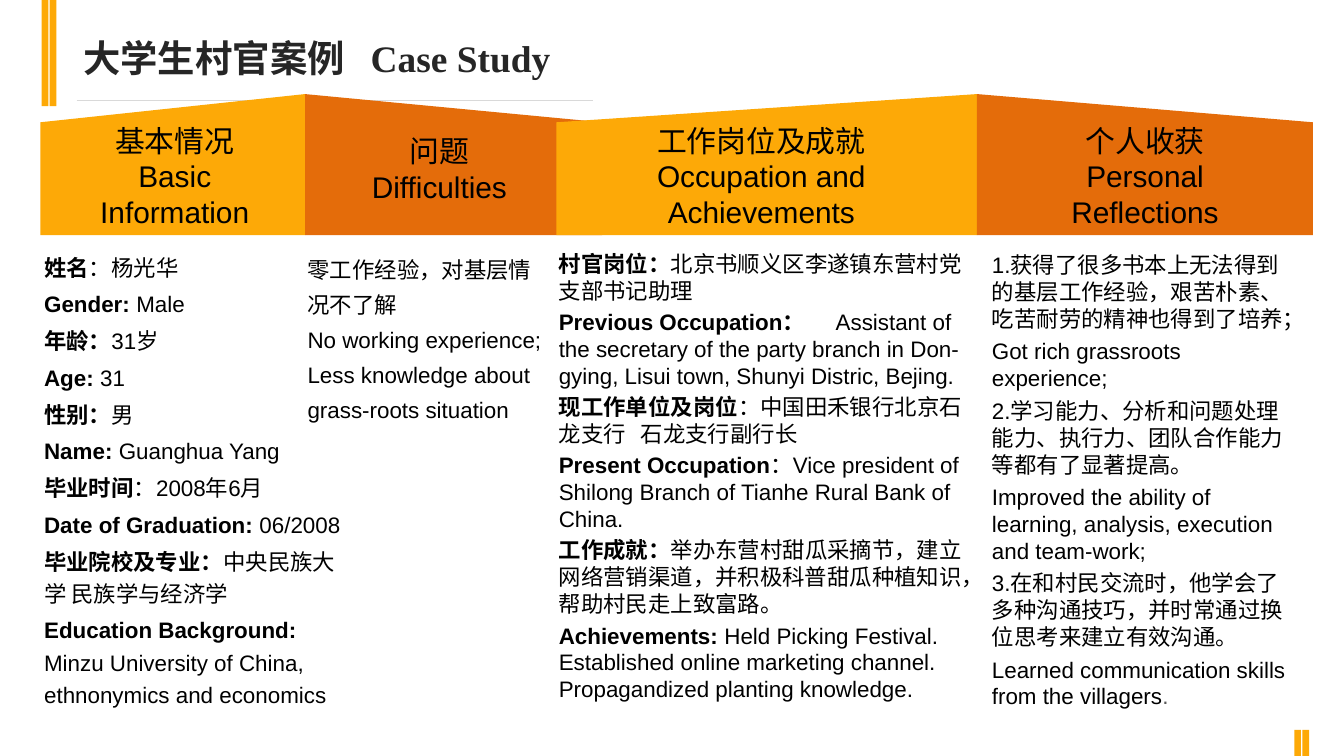
from pptx import Presentation
from pptx.dml.color import RGBColor
from pptx.enum.shapes import MSO_CONNECTOR, MSO_SHAPE
from pptx.enum.text import MSO_AUTO_SIZE, PP_ALIGN
from pptx.oxml.ns import qn
from pptx.util import Inches, Pt
from lxml.etree import SubElement

AMBER = RGBColor(0xFD, 0xA9, 0x07)
ORANGE = RGBColor(0xE4, 0x6C, 0x0A)
BLACK = RGBColor(0, 0, 0)
DARK = RGBColor(0x26, 0x26, 0x26)
GRAY = RGBColor(0x59, 0x59, 0x59)
RULE = RGBColor(0xD9, 0xD9, 0xD9)

SLIDE_W = 10
SLIDE_H = SLIDE_W * 9 / 16
PANEL_TOP, PANEL_H = 0.7, 1.05
BAR_W, BAR_STEP = 0.05, 0.06

# Content: a paragraph is (bold label, plain text)
BASICS = [
    ("姓名", "：杨光华"),
    ("Gender: ", "Male"),
    ("年龄：", "31岁"),
    ("Age: ", "31"),
    ("性别：", "男"),
    ("Name: ", "Guanghua Yang"),
    ("毕业时间", "：2008年6月"),
    ("Date of Graduation: ", "06/2008"),
    ("毕业院校及专业：", "中央民族大学 民族学与经济学"),
    ("Education Background: ", "Minzu University of China, ethnonymics and economics"),
]
DIFFICULTIES = [
    ("", "零工作经验，对基层情况不了解"),
    ("", "No working experience;"),
    ("", "Less knowledge about grass-roots situation"),
]
JOBS = [
    ("村官岗位：", "北京书顺义区李遂镇东营村党支部书记助理"),
    ("Previous Occupation：", "\tAssistant of the secretary of the party branch in "
     "Don-gying, Lisui town, Shunyi Distric, Bejing."),
    ("现工作单位及岗位", "：中国田禾银行北京石龙支行\t石龙支行副行长"),
    ("Present Occupation", "：Vice president of Shilong Branch of Tianhe Rural Bank of China."),
    ("工作成就：", "举办东营村甜瓜采摘节，建立网络营销渠道，"
     "并积极科普甜瓜种植知识，帮助村民走上致富路。"),
    ("Achievements: ", "Held Picking Festival. Established online marketing channel. "
     "Propagandized planting knowledge."),
]
REFLECTIONS = [
    ("", "1.获得了很多书本上无法得到的基层工作经验，艰苦朴素、吃苦耐劳的精神也得到了培养；"),
    ("", "Got rich grassroots experience;"),
    ("", "2.学习能力、分析和问题处理能力、执行力、团队合作能力等都有了显著提高。"),
    ("", "Improved the ability of learning, analysis, execution and team-work;"),
    ("", "3.在和村民交流时，他学会了多种沟通技巧，并时常通过换位思考来建立有效沟通。"),
    ("", "Learned communication skills from the villagers"),
]

# Columns: panel (left, width), heading box, heading, body box, body, body style
COLUMNS = [
    dict(panel=(0.3, 1.97), head_at=(0.49, 0.86, 1.62, 0.91),
         head=["基本情况", "Basic Information"],
         body_at=(0.23, 1.8, 2.42, 3.61), body=BASICS,
         style=dict(line=1.2, before=2.4)),
    dict(panel=(2.27, 2.21), head_at=(2.5, 0.94, 1.54, 0.64),
         head=["问题", "Difficulties"],
         body_at=(2.19, 1.8, 1.97, 1.39), body=DIFFICULTIES,
         style=dict(line=1.3)),
    dict(panel=(4.14, 3.13), head_at=(4.61, 0.86, 2.11, 0.91),
         head=["工作岗位及成就", "Occupation and Achievements"],
         body_at=(4.06, 1.81, 3.2, 3.53), body=JOBS,
         style=dict(before=2.4, tabs={1: 2.06, 2: 0.61})),
    dict(panel=(7.27, 2.5), head_at=(7.58, 0.86, 1.88, 0.91),
         head=["个人收获", "Personal Reflections"],
         body_at=(7.34, 1.83, 2.35, 3.32), body=REFLECTIONS,
         style=dict(before=3, inset=0.04)),
]


def add_block(s, kind, box, color):
    sp = s.shapes.add_shape(kind, *map(Inches, box))
    sp.shadow.inherit = False
    sp.fill.solid()
    sp.fill.fore_color.rgb = color
    sp.line.fill.background()
    return sp


def add_run(p, text, size, color=BLACK, bold=False, font="Arial"):
    r = p.add_run()
    r.text = text
    r.font.size, r.font.bold, r.font.name = Pt(size), bold, font
    r.font.color.rgb = color


def add_tab_stop(p, inches):
    tabs = SubElement(p._p.get_or_add_pPr(), qn("a:tabLst"))
    SubElement(tabs, qn("a:tab"), pos=str(Inches(inches)), algn="l")


def add_text(s, box, paragraphs, size, align=PP_ALIGN.LEFT, line=None,
             before=0, inset=None, tabs=None):
    tf = s.shapes.add_textbox(*map(Inches, box)).text_frame
    tf.word_wrap = True
    tf.auto_size = MSO_AUTO_SIZE.SHAPE_TO_FIT_TEXT
    if inset is not None:
        tf.margin_left = tf.margin_right = tf.margin_top = tf.margin_bottom = Inches(inset)
    for i, (label, text) in enumerate(paragraphs):
        p = tf.add_paragraph() if i else tf.paragraphs[0]
        p.alignment = align
        if line:
            p.line_spacing = line
        if i and before:
            p.space_before = Pt(before)
        if tabs and i in tabs:
            add_tab_stop(p, tabs[i])
        if label:
            add_run(p, label, size, bold=True)
        if text:
            add_run(p, text, size)
    return tf


prs = Presentation()
prs.slide_width, prs.slide_height = Inches(SLIDE_W), Inches(SLIDE_H)
s = prs.slides.add_slide(prs.slide_layouts[6])

# Corner bars
for left, top, height in [(0.31, 0, 0.79), (9.63, 5.43, SLIDE_H - 5.43)]:
    for i in range(2):
        add_block(s, MSO_SHAPE.RECTANGLE, (left + i * BAR_STEP, top, BAR_W, height), AMBER)

# Rule under the title
rule = s.shapes.add_connector(MSO_CONNECTOR.STRAIGHT, *map(Inches, (0.57, 0.75, 4.41, 0.75)))
rule.line.color.rgb = RULE
rule.line.width = Pt(0.75)
SubElement(rule._element.spPr, qn("a:effectLst"))

# Heading panels, every second one mirrored
for i, col in enumerate(COLUMNS):
    left, width = col["panel"]
    panel = add_block(s, MSO_SHAPE.FLOWCHART_MANUAL_INPUT,
                      (left, PANEL_TOP, width, PANEL_H), ORANGE if i % 2 else AMBER)
    if i % 2:
        panel._element.spPr.xfrm.set("flipH", "1")

# Headings and body text
for col in COLUMNS:
    tf = add_text(s, col["body_at"], col["body"], 12, **col["style"])
    if col["body"] is REFLECTIONS:
        add_run(tf.paragraphs[-1], ".", 12, GRAY)
    add_text(s, col["head_at"], [("", t) for t in col["head"]], 16, PP_ALIGN.CENTER)

# Title
p = add_text(s, (0.52, 0.21, 4.23, 0.44), [("", "")], 20).paragraphs[0]
add_tab_stop(p, 2.14)
add_run(p, "大学生村官案例\t", 20, DARK, True, "Arial Narrow")
add_run(p, "Case Study", 20, DARK, True, "Times New Roman")

prs.save("out.pptx")
